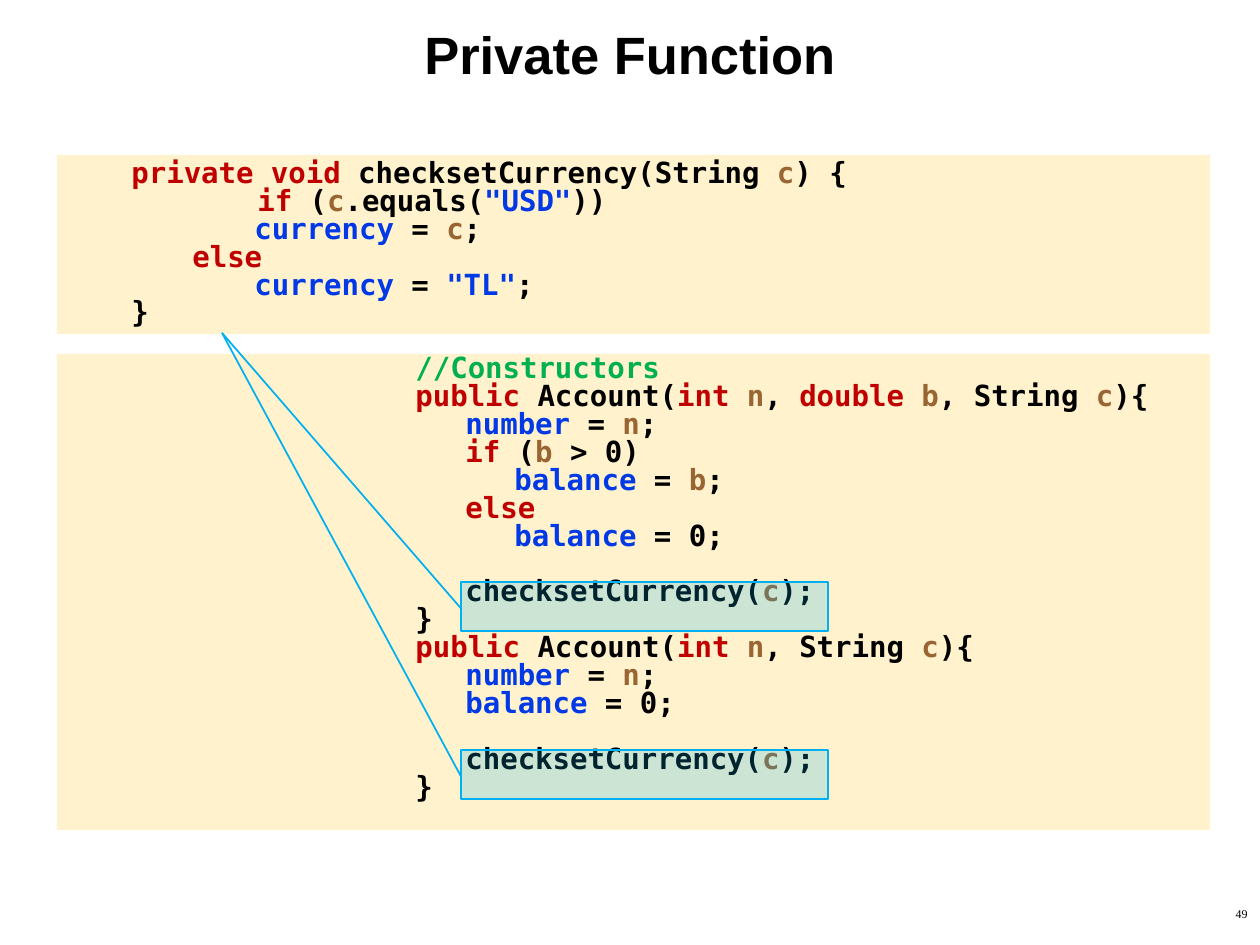
from lxml.etree import SubElement
from pptx import Presentation
from pptx.dml.color import RGBColor
from pptx.enum.shapes import MSO_SHAPE
from pptx.enum.text import MSO_ANCHOR, PP_ALIGN
from pptx.oxml.ns import qn
from pptx.util import Pt

COLORS = {
    "text": "000000", "keyword": "C00000", "parameter": "996633",
    "value": "0039E5", "comment": "00B050", "panel": "FFC000", "callout": "00B0F0",
}

TITLE = "Private Function"
PAGE_NUMBER = "49"

CLOSE = [("}", "text")]
ELSE = [("else", "keyword")]
NUMBER_LINE = [("number ", "value"), ("= ", "text"), ("n", "parameter"), (";", "text")]
ZERO_LINE = [("balance ", "value"), ("= 0;", "text")]
CHECK_CALL = [("checksetCurrency(", "text"), ("c", "parameter"), (");", "text")]
CONSTRUCTOR = [("public ", "keyword"), ("Account(", "text"),
               ("int ", "keyword"), ("n", "parameter")]
LAST_PARAMETER = [(", String ", "text"), ("c", "parameter"), ("){", "text")]

# indent in px, blank lines above, runs
CODE = [
    (62, 0, [("private void ", "keyword"), ("checksetCurrency(String ", "text"),
             ("c", "parameter"), (") {", "text")]),
    (188, 0, [("if", "keyword"), (" (", "text"), ("c", "parameter"), (".equals(", "text"),
              ('"USD"', "value"), ("))", "text")]),
    (185, 0, [("currency ", "value"), ("= ", "text"), ("c", "parameter"), (";", "text")]),
    (123, 0, ELSE),
    (185, 0, [("currency", "value"), (" = ", "text"), ('"TL"', "value"), (";", "text")]),
    (62, 0, CLOSE),
    (346, 1, [("//Constructors", "comment")]),
    (346, 0, CONSTRUCTOR + [(",", "text"), (" double ", "keyword"), ("b", "parameter")]
     + LAST_PARAMETER),
    (396, 0, NUMBER_LINE),
    (396, 0, [("if ", "keyword"), ("(", "text"), ("b ", "parameter"), ("> 0)", "text")]),
    (445, 0, [("balance ", "value"), ("= ", "text"), ("b", "parameter"), (";", "text")]),
    (396, 0, ELSE),
    (445, 0, ZERO_LINE),
    (396, 1, CHECK_CALL),
    (346, 0, CLOSE),
    (346, 0, CONSTRUCTOR + LAST_PARAMETER),
    (396, 0, NUMBER_LINE),
    (396, 0, ZERO_LINE),
    (396, 1, CHECK_CALL),
    (346, 0, CLOSE),
]

PANELS = [(57, 354, 1153, 476), (57, 155, 1153, 179)]
CALLOUTS = [(461, 582, 367, 49), (461, 750, 367, 49)]
CALLOUT_TARGET = (222, 333)
LINE_HEIGHT = 28
SCALE = 914400 // 126


def px(length):
    return round(length * SCALE)


def color(name):
    return RGBColor.from_string(COLORS[name])


def add_tinted_shape(slide, kind, box, name):
    shape = slide.shapes.add_shape(kind, *map(px, box))
    shape.shadow.inherit = False
    shape.fill.solid()
    shape.fill.fore_color.rgb = color(name)
    fill_color = shape.fill._xPr.find(qn("a:solidFill"))[0]
    SubElement(fill_color, qn("a:alpha"), val="20000")
    shape.line.fill.background()
    return shape


def add_text_frame(slide, box):
    text_frame = slide.shapes.add_textbox(*map(px, box)).text_frame
    text_frame.word_wrap = True
    return text_frame


def style_run(run, font_name, size, name="text", bold=True):
    run.font.name = font_name
    run.font.size = Pt(size)
    run.font.bold = bold
    run.font.color.rgb = color(name)


def add_label(slide, box, text, alignment, font_name, size, bold):
    text_frame = add_text_frame(slide, box)
    text_frame.text = text
    paragraph = text_frame.paragraphs[0]
    paragraph.alignment = alignment
    style_run(paragraph.runs[0], font_name, size, bold=bold)
    return text_frame


def add_code(slide, box):
    text_frame = add_text_frame(slide, box)
    for index, (indent, blank_lines, runs) in enumerate(CODE):
        paragraph = text_frame.add_paragraph() if index else text_frame.paragraphs[0]
        paragraph.line_spacing = 0.8
        paragraph.space_before = px(blank_lines * LINE_HEIGHT)
        paragraph._p.get_or_add_pPr().set("marL", str(px(indent)))
        for text, name in runs:
            run = paragraph.add_run()
            run.text = text
            style_run(run, "DejaVu Sans Mono", 16.6, name)


def add_callout(slide, box):
    left, top, width, height = box
    target_x, target_y = CALLOUT_TARGET
    callout = add_tinted_shape(slide, MSO_SHAPE.LINE_CALLOUT_1, box, "callout")
    callout.line.color.rgb = color("callout")
    callout.line.width = Pt(1)
    anchors = (0.54, 0, (target_y - top) / height, (target_x - left) / width)
    for index, value in enumerate(anchors):
        callout.adjustments[index] = value


def main():
    presentation = Presentation()
    presentation.slide_width = px(1260)
    presentation.slide_height = px(945)
    slide = presentation.slides.add_slide(presentation.slide_layouts[6])
    for box in PANELS:
        add_tinted_shape(slide, MSO_SHAPE.RECTANGLE, box, "panel")
    add_code(slide, (57, 155, 1153, 743))
    title = add_label(slide, (0, 0, 1260, 106), TITLE, PP_ALIGN.CENTER, "Arial", 30, True)
    title.vertical_anchor = MSO_ANCHOR.MIDDLE
    add_label(slide, (998, 900, 262, 45), PAGE_NUMBER, PP_ALIGN.RIGHT,
              "Times New Roman", 6.8, False)
    for box in CALLOUTS:
        add_callout(slide, box)
    presentation.save("out.pptx")


if __name__ == "__main__":
    main()
